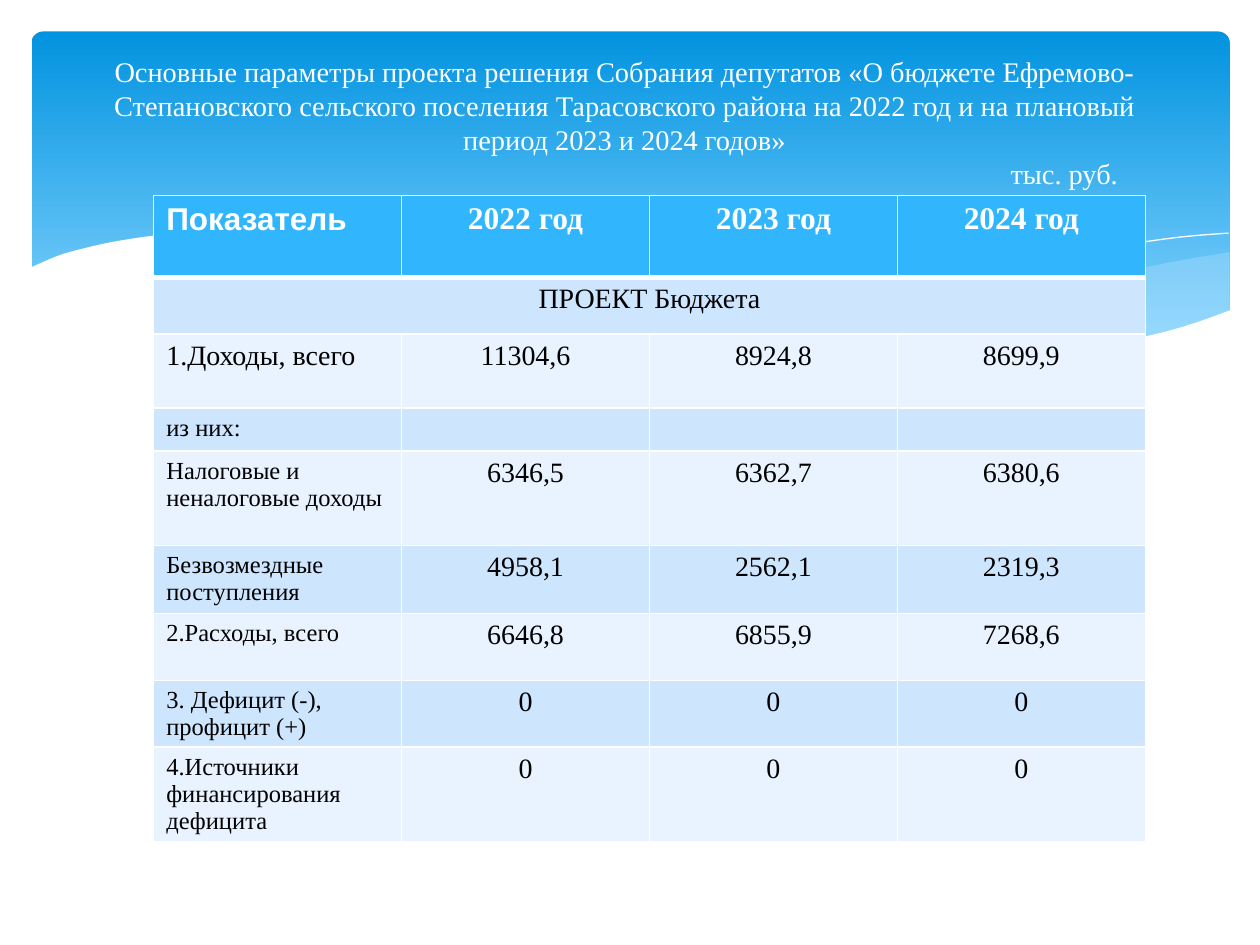
"""Build the budget parameters slide."""
from dataclasses import dataclass

from lxml import etree
from pptx import Presentation
from pptx import util as u
from pptx.dml.color import RGBColor
from pptx.enum import shapes, text
from pptx.oxml.ns import qn


@dataclass(frozen=True)
class Theme:
    """Colours, fonts and type sizes."""
    white: str = "FFFFFF"
    ink: str = "000000"
    deep: str = "0293E0"
    sky: str = "83D3FE"
    mist: str = "C6E7FC"
    head: str = "31B6FD"
    bands: tuple = ("CEE5FE", "E8F3FF")
    serif: str = "Times New Roman"
    sans: str = "Arial"
    title: float = 16.2
    lead: float = 19.4
    large: float = 18
    body: float = 16
    small: float = 14


T = Theme()
COLS, ROWS = 10, 7.5
UNIT = u.Inches(1)
LEFT, MID = text.PP_ALIGN.LEFT, text.PP_ALIGN.CENTER

RIGHT_WAVE = [
    [(9.76, 2), (9.35, 2.07), (8.91, 2.16), (8.61, 2.23), (8.05, 2.37),
     (7.53, 2.48), (6.61, 2.65)],
    [(6.61, 2.65), (7.05, 2.71), (7.57, 2.76), (8.14, 2.78), (8.63, 2.75),
     (9.05, 2.69), (9.42, 2.59), (9.76, 2.47)],
]
LONG_WAVE = [
    [(8.93, 2.73), (8.37, 2.65), (7.75, 2.54), (7.06, 2.4), (6.29, 2.22),
     (5.69, 2.08), (5.14, 1.98), (4.65, 1.91), (4.2, 1.87), (3.8, 1.85),
     (3.44, 1.86), (2.86, 1.91)],
    [(2.86, 1.91), (3.42, 1.99), (4.04, 2.11), (4.49, 2.22), (5.3, 2.4),
     (6.01, 2.55), (6.65, 2.66), (7.22, 2.74), (7.73, 2.77), (8.18, 2.78),
     (8.57, 2.77), (8.93, 2.73)],
]
LONG_LINE = [[(3.09, 1.95), (3.44, 1.9), (4.01, 1.87), (4.69, 1.89),
              (5.33, 1.94), (6.08, 2.04), (6.95, 2.19), (7.95, 2.41),
              (9.07, 2.72)]]
RIGHT_LINE = [[(6.13, 2.57), (6.72, 2.41), (7.48, 2.23), (8.36, 2.04),
               (8.95, 1.94), (9.38, 1.88), (9.75, 1.85)]]
FRONT = [
    [(9.77, 2.46), (9.4, 2.59), (8.99, 2.69), (8.5, 2.75), (8.09, 2.77),
     (7.61, 2.75), (7.08, 2.7), (6.48, 2.62), (5.79, 2.5), (5.03, 2.33),
     (4.47, 2.2), (3.91, 2.07), (3.4, 1.97), (2.92, 1.9), (2.5, 1.86),
     (2.11, 1.84), (1.77, 1.84), (1.32, 1.86), (0.95, 1.91), (0.67, 1.97),
     (0.46, 2.03), (0.23, 2.13)],
    [(0.23, 3.29), (9.77, 3.29)],
]

TITLE = ("Основные параметры проекта решения Собрания депутатов «О бюджете "
         "Ефремово-Степановского сельского поселения Тарасовского района "
         "на 2022 год и на плановый период 2023 и 2024 годов»")
HEADS = ("Показатель", "2022 год", "2023 год", "2024 год")
DATA = [
    ("ПРОЕКТ Бюджета", "", "", ""),
    ("1.Доходы, всего", "11304,6", "8924,8", "8699,9"),
    ("из них:", "", "", ""),
    ("Налоговые и неналоговые доходы", "6346,5", "6362,7", "6380,6"),
    ("Безвозмездные поступления", "4958,1", "2562,1", "2319,3"),
    ("2.Расходы, всего", "6646,8", "6855,9", "7268,6"),
    ("3. Дефицит (-), профицит (+)", "0", "0", "0"),
    ("4.Источники финансирования дефицита", "0", "0", "0"),
]
HEIGHTS = (0.65, 0.45, 0.59, 0.34, 0.75, 0.54, 0.53, 0.53, 0.75)


def span(*cells):
    """Turn grid units into lengths."""
    return [u.Emu(round(c * UNIT)) for c in cells]


def rgb(hue):
    """Turn a hex string into a colour."""
    return RGBColor.from_string(hue)


def write(para, words, size=T.body, font=T.serif, hue=T.ink, bold=False,
          align=LEFT, lead=None):
    """Put formatted text into a paragraph."""
    para.alignment = align
    if lead:
        para.line_spacing = u.Pt(lead)
    if not words:
        etree.SubElement(para._p, qn("a:endParaRPr"), sz=str(int(size * 100)))
        return
    run = para.add_run()
    run.text = words
    run.font.size, run.font.name, run.font.bold = u.Pt(size), font, bold
    run.font.color.rgb = rgb(hue)


def curve(knots, steps=4):
    """Return points of a smooth curve through the knots."""
    ends = [knots[0], *knots, knots[-1]]
    dots = [knots[0]]
    for a, b, c, d in zip(ends, ends[1:], ends[2:], ends[3:]):
        for t in (i / steps for i in range(1, steps + 1)):
            dots.append(tuple(
                q + t * (r - p + t * (2 * p - 5 * q + 4 * r - s
                                      + t * (3 * (q - r) + s - p))) / 2
                for p, q, r, s in zip(a, b, c, d)))
    return dots


def wave(slide, box, parts, fill=None, alpha=None, line=None):
    """Draw a filled wave or an open line within the box."""
    dots = [tuple(span(box[0] + x, box[1] + y)) for part in parts
            for x, y in (curve(part) if len(part) > 2 else part)]
    pen = slide.shapes.build_freeform(*dots[0])
    pen.add_line_segments(dots[1:], close=bool(fill))
    shape = pen.convert_to_shape()
    shape.shadow.inherit = False
    if fill:
        shape.fill.solid()
        shape.fill.fore_color.rgb = rgb(fill)
        shape.line.fill.background()
    else:
        shape.fill.background()
        shape.line.color.rgb = rgb(line)
        shape.line.width = u.Pt(0)
    if alpha:
        tone = shape._element.spPr.find(".//" + qn("a:srgbClr"))
        etree.SubElement(tone, qn("a:alpha"), val=str(alpha * 1000))


def backdrop(slide, box):
    """Place the gradient panel and its waves."""
    left, top = box[:2]
    panel = slide.shapes.add_shape(
        shapes.MSO_SHAPE.ROUNDED_RECTANGLE,
        *span(left + 0.25, top + 0.25, 9.51, 2.7))
    panel.adjustments[0] = 0.034
    panel.shadow.inherit = False
    panel.line.fill.background()
    panel.fill.gradient()
    panel.fill.gradient_angle = 270
    for stop, hue, pos in zip(panel.fill.gradient_stops, (T.deep, T.sky),
                              (0, 0.9)):
        stop.color.rgb, stop.position = rgb(hue), pos
    wave(slide, box, RIGHT_WAVE, fill=T.mist, alpha=29)
    wave(slide, box, LONG_WAVE, fill=T.mist, alpha=40)
    wave(slide, box, LONG_LINE, line=T.white)
    wave(slide, box, RIGHT_LINE, line=T.white)
    wave(slide, box, FRONT, fill=T.white)


def paint(cell, hue, above=1, below=1):
    """Fill a cell and give it white borders."""
    props = cell._tc.get_or_add_tcPr()
    for side, width in zip("LRTB", (1, 1, above, below)):
        edge = etree.SubElement(props, qn("a:ln" + side),
                                w=str(u.Pt(width)))
        solid = etree.SubElement(edge, qn("a:solidFill"))
        etree.SubElement(solid, qn("a:srgbClr"), val=T.white)
    cell.fill.solid()
    cell.fill.fore_color.rgb = rgb(hue)


def budget(slide, box):
    """Place the budget table in the box."""
    grid = slide.shapes.add_table(len(HEIGHTS), len(HEADS), *span(*box)).table
    for col in grid.columns:
        col.width = span(box[2] / len(HEADS))[0]
    for row, high in zip(grid.rows, HEIGHTS):
        row.height = span(high)[0]
    for j, words in enumerate(HEADS):
        cell = grid.cell(0, j)
        paint(cell, T.head, below=3)
        write(cell.text_frame.paragraphs[0], words, size=T.large, bold=True,
              hue=T.white, font=T.serif if j else T.sans,
              align=MID if j else LEFT)
    for i, row in enumerate(DATA, 1):
        for j, words in enumerate(row):
            cell = grid.cell(i, j)
            paint(cell, T.bands[(i - 1) % 2], above=3 if i == 1 else 1)
            small = i > 2 and (j == 0 or not words)
            write(cell.text_frame.paragraphs[0], words,
                  size=T.small if small else T.body,
                  align=MID if j or i == 1 else LEFT)
    grid.cell(1, 0).merge(grid.cell(1, len(HEADS) - 1))


def heading(slide, box):
    """Place the title and the unit note over the panel."""
    title = slide.shapes.title
    title.left, title.top, title.width, title.height = span(*box)
    slide.shapes._spTree.append(title._element)
    frame = title.text_frame
    frame.word_wrap = True
    frame.auto_size = text.MSO_AUTO_SIZE.NONE
    frame.vertical_anchor = text.MSO_ANCHOR.MIDDLE
    look = dict(size=T.title, hue=T.white, lead=T.lead)
    write(frame.paragraphs[0], TITLE, align=MID, **look)
    note = frame.add_paragraph()
    write(note, "тыс. руб.", **look)
    note._p.get_or_add_pPr().set("marL", str(span(7.42)[0]))


def main():
    """Build and save the slide."""
    deck = Presentation()
    deck.slide_width, deck.slide_height = span(COLS, ROWS)
    slide = deck.slides.add_slide(deck.slide_layouts[5])
    backdrop(slide, (0, 0, COLS, ROWS))
    budget(slide, (1.22, 1.55, 7.87, sum(HEIGHTS)))
    heading(slide, (0.5, 0.55, 8.91, 0.84))
    deck.save("out.pptx")


if __name__ == "__main__":
    main()
